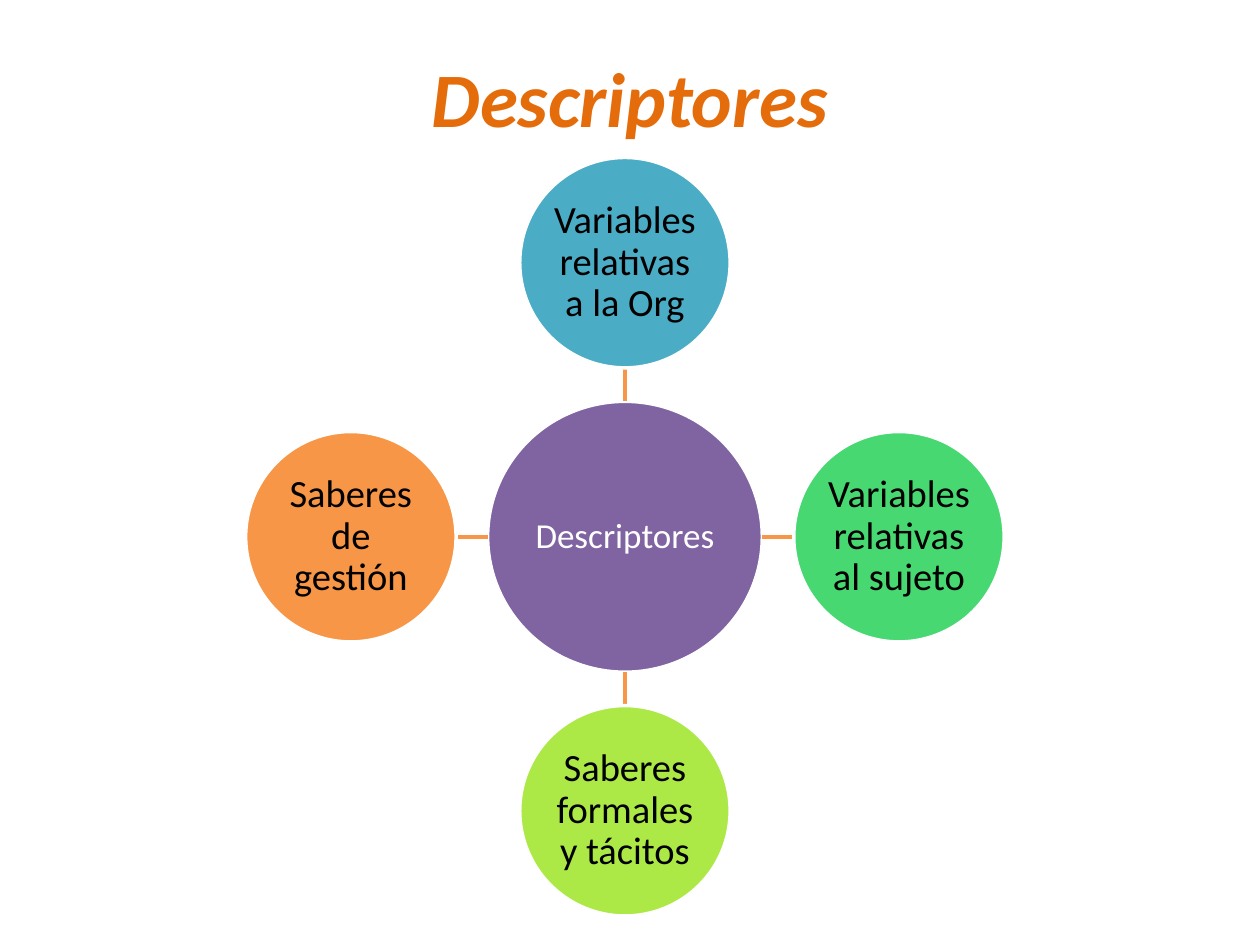
from pptx import Presentation
from pptx.dml.color import RGBColor
from pptx.enum.shapes import MSO_CONNECTOR, MSO_SHAPE
from pptx.enum.text import MSO_ANCHOR, PP_ALIGN
from pptx.oxml.ns import qn
from pptx.util import Inches, Pt
from lxml import etree

OVAL = MSO_SHAPE.OVAL
STRAIGHT = MSO_CONNECTOR.STRAIGHT
MIDDLE = MSO_ANCHOR.MIDDLE
CENTER = PP_ALIGN.CENTER

TITLE = "Descriptores"
HUB = "Descriptores"
SATELLITES = [
    ("Variables relativas a la Org", "4BACC6", (0, -1)),
    ("Variables relativas al sujeto", "47D872", (1, 0)),
    ("Saberes formales y tácitos", "ACE946", (0, 1)),
    ("Saberes de gestión", "F79646", (-1, 0)),
]

THEME = {
    "font": "Calibri",
    "title": {"size": 44, "color": "E46C0A", "bold": True, "italic": True},
    "hub": {"size": 20, "color": "FFFFFF"},
    "satellite": {"size": 22, "color": "000000"},
    "hub_fill": "8064A2",
    "outline": "FFFFFF",
    "spoke": "F79646",
    "line_width": 2,
}

TITLE_BOX = (0.5, 0.3, 9, 0.93)
CENTER_X, CENTER_Y = 4.96, 4.26
HUB_WIDTH, HUB_HEIGHT = 2.18, 2.15
SATELLITE_SIZE = 1.67
ORBIT = 2.175


def write(frame, text, style, margin, spacing=1.0):
    settings = {"word_wrap": True, "vertical_anchor": MIDDLE}
    for side in ("left", "top", "right", "bottom"):
        settings[f"margin_{side}"] = Inches(margin)
    for name, value in settings.items():
        setattr(frame, name, value)
    paragraph = frame.paragraphs[0]
    paragraph.alignment = CENTER
    paragraph.line_spacing = spacing
    run = paragraph.add_run()
    run.text = text
    font = {"name": THEME["font"], "size": Pt(style["size"]),
            "bold": style.get("bold", False), "italic": style.get("italic", False)}
    for name, value in font.items():
        setattr(run.font, name, value)
    run.font.color.rgb = RGBColor.from_string(style["color"])


def paint_line(line, color):
    line.color.rgb = RGBColor.from_string(color)
    line.width = Pt(THEME["line_width"])


def add_circle(slide, x, y, width, height, fill, text, style, margin):
    circle = slide.shapes.add_shape(
        OVAL, Inches(x - width / 2), Inches(y - height / 2), Inches(width), Inches(height))
    circle.shadow.inherit = False
    circle.fill.solid()
    circle.fill.fore_color.rgb = RGBColor.from_string(fill)
    paint_line(circle.line, THEME["outline"])
    write(circle.text_frame, text, style, margin, 0.9)


def add_spoke(slide, dx, dy):
    outer = ORBIT - SATELLITE_SIZE / 2
    spoke = slide.shapes.add_connector(
        STRAIGHT,
        Inches(CENTER_X + dx * HUB_WIDTH / 2), Inches(CENTER_Y + dy * HUB_HEIGHT / 2),
        Inches(CENTER_X + dx * outer), Inches(CENTER_Y + dy * outer))
    paint_line(spoke.line, THEME["spoke"])
    etree.SubElement(spoke._element.spPr, qn("a:effectLst"))


def main():
    deck = Presentation()
    deck.slide_width, deck.slide_height = Inches(10), Inches(7.5)
    slide = deck.slides.add_slide(deck.slide_layouts[6])

    heading = slide.shapes.add_textbox(*map(Inches, TITLE_BOX))
    write(heading.text_frame, TITLE, THEME["title"], 0.05)

    add_circle(slide, CENTER_X, CENTER_Y, HUB_WIDTH, HUB_HEIGHT,
               THEME["hub_fill"], HUB, THEME["hub"], 0.01)
    for label, fill, (dx, dy) in SATELLITES:
        add_spoke(slide, dx, dy)
        add_circle(slide, CENTER_X + dx * ORBIT, CENTER_Y + dy * ORBIT,
                   SATELLITE_SIZE, SATELLITE_SIZE, fill, label, THEME["satellite"], 0.02)

    deck.save("out.pptx")


if __name__ == "__main__":
    main()
